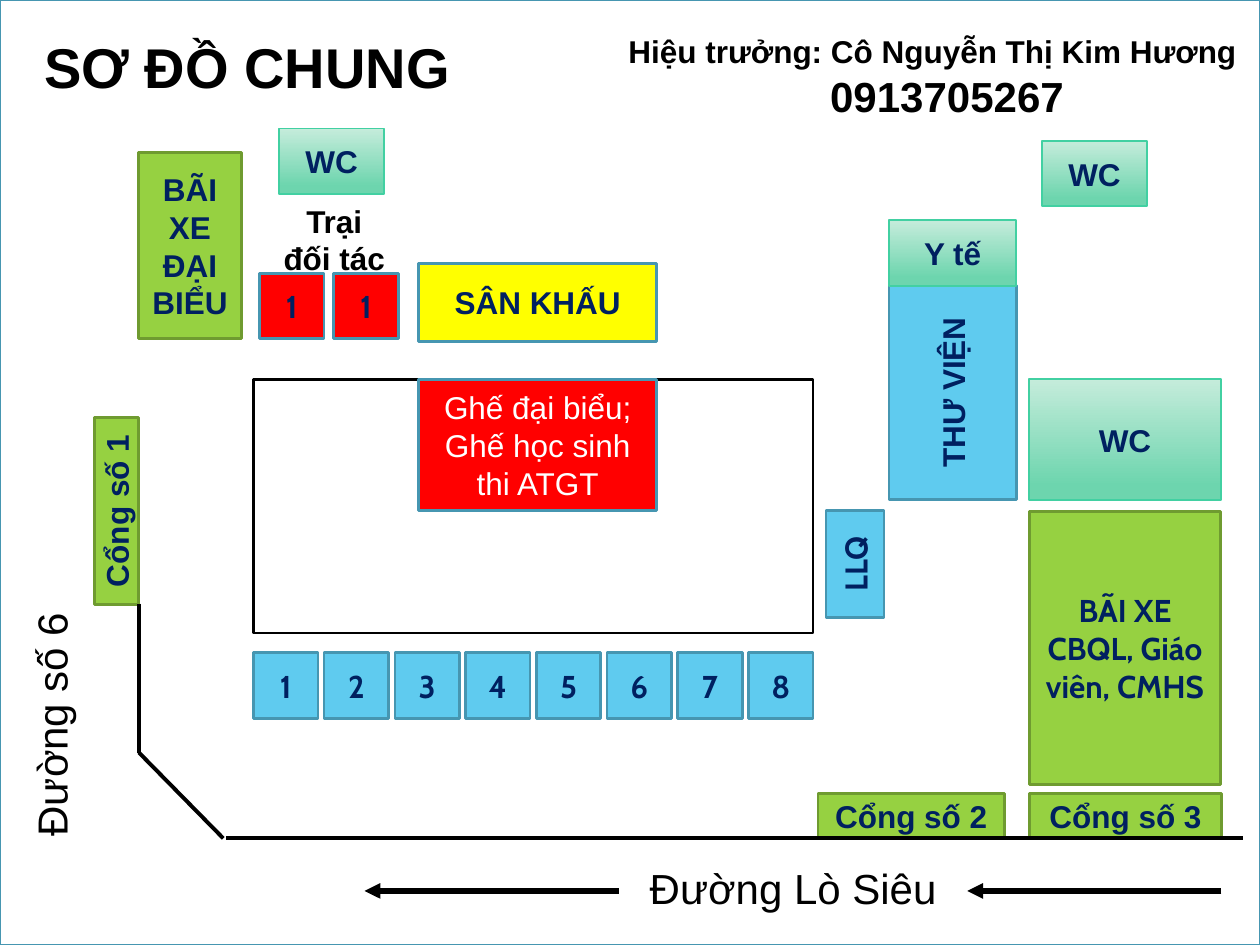
from lxml.etree import SubElement
from pptx import Presentation
from pptx.dml.color import RGBColor
from pptx.enum.shapes import MSO_CONNECTOR, MSO_SHAPE
from pptx.enum.text import MSO_ANCHOR, PP_ALIGN
from pptx.oxml.ns import qn
from pptx.util import Cm, Pt

COLORS = {
    "white": "FFFFFF", "black": "000000", "navy": "002060",
    "green": "96D141", "green_line": "6F9B30",
    "blue": "5FCBEF", "blue_line": "4696B1",
    "mint_top": "C5ECDB", "mint_bottom": "6DD5AE", "mint_line": "42D0A2",
    "yellow": "FFFF00", "red": "FF0000",
}
LINE_COLORS = {"green": "green_line", "white": "black", "mint": "mint_line"}
SMALL_ROOM = (1.3, 1.32)
SMALL_WC = (2.11, 1.32)


def color(name):
    return RGBColor.from_string(COLORS[name])


def write_text(shape, text, size=18, font="Arial", ink="navy", bold=True,
               align=PP_ALIGN.CENTER, anchor=MSO_ANCHOR.MIDDLE):
    frame = shape.text_frame
    frame.word_wrap = True
    frame.vertical_anchor = anchor
    frame.text = text
    for paragraph in frame.paragraphs:
        paragraph.alignment = align
        paragraph.font.size = Pt(size)
        paragraph.font.name = font
        paragraph.font.bold = bold
        paragraph.font.color.rgb = color(ink)
    return frame


def frame_lengths(origin, area, upright):
    left, top, width, height = area
    left, top = origin[0] + left, origin[1] + top
    if upright:
        left, top = left + (width - height) / 2, top + (height - width) / 2
        width, height = height, width
    return [Cm(length) for length in (left, top, width, height)]


def add_room(slide, origin, area, fill, text="", upright=False, line=None, **text_format):
    shape = slide.shapes.add_shape(MSO_SHAPE.RECTANGLE, *frame_lengths(origin, area, upright))
    shape.rotation = 270 if upright else 0
    shape.shadow.inherit = False
    if fill == "mint":
        shape.fill.gradient()
        shape.fill.gradient_angle = 270
        for stop, position, name in zip(shape.fill.gradient_stops, (0, 0.88),
                                        ("mint_top", "mint_bottom")):
            stop.position = position
            stop.color.rgb = color(name)
    else:
        shape.fill.solid()
        shape.fill.fore_color.rgb = color(fill)
    shape.line.color.rgb = color(line or LINE_COLORS.get(fill, "blue_line"))
    shape.line.width = Pt(1 if fill == "mint" else 1.5)
    if text:
        write_text(shape, text, **text_format)


def add_label(slide, origin, area, text, upright=False, **text_format):
    shape = slide.shapes.add_textbox(*frame_lengths(origin, area, upright))
    shape.rotation = 270 if upright else 0
    return write_text(shape, text, ink="black", anchor=MSO_ANCHOR.TOP, **text_format)


def add_line(slide, origin, start, end, width=2.25, arrow=False):
    points = [Cm(base + offset) for point in (start, end) for base, offset in zip(origin, point)]
    connector = slide.shapes.add_connector(MSO_CONNECTOR.STRAIGHT, *points)
    connector.line.color.rgb = color("black")
    connector.line.width = Pt(width)
    if arrow:
        SubElement(connector.line._get_or_add_ln(), qn("a:tailEnd"), type="triangle")
    SubElement(connector._element.spPr, qn("a:effectLst"))


def build_header(slide, box):
    add_label(slide, box, (0, 0, 8.94, 1.63), "SƠ ĐỒ CHUNG", size=32, align=PP_ALIGN.LEFT)
    frame = add_label(slide, box, (11.78, 0, 12.88, 2.06),
                      "Hiệu trưởng: Cô Nguyễn Thị Kim Hương\n0913705267", align=PP_ALIGN.LEFT)
    phone = frame.paragraphs[1]
    phone.alignment = PP_ALIGN.CENTER
    phone.font.size = Pt(24)
    phone._p.get_or_add_pPr().set("marL", str(Cm(0.46)))


def build_delegate_area(slide, box):
    add_room(slide, box, (0, 0.48, 2.08, 3.76), "green", "BÃI XE\nĐẠI BIỂU")
    add_room(slide, box, (2.84, 0, *SMALL_WC), "mint", "WC")
    for index in range(2):
        add_room(slide, box, (2.44 + 1.5 * index, 2.92, *SMALL_ROOM), "red", "1", font="Cabin")
    add_label(slide, box, (2.59, 1.35, 2.72, 1.8), "Trại\nđối tác")


def build_yard(slide, box):
    width = box[2]
    add_room(slide, box, (3.33, 0, 4.8, 1.57), "yellow", "SÂN KHẤU")
    add_room(slide, box, (0, 2.34, width, 5.11), "white")
    add_room(slide, box, (3.33, 2.34, 4.8, 2.64), "red",
             "Ghế đại biểu;\nGhế học sinh thi ATGT", ink="white", bold=False)
    step = (width - SMALL_ROOM[0]) / 7
    for index in range(8):
        add_room(slide, box, (step * index, 7.85, *SMALL_ROOM), "blue",
                 str(index + 1), font="Cabin")


def build_service_area(slide, box):
    add_room(slide, box, (0, 7.45, 1.17, 2.16), "blue", "LLQ", upright=True, font="Cabin")
    add_room(slide, box, (1.27, 2.91, 2.57, 4.32), "blue", "THƯ VIỆN", upright=True)
    add_room(slide, box, (1.27, 1.6, 2.57, 1.32), "mint", "Y tế")
    add_room(slide, box, (4.36, 0, *SMALL_WC), "mint", "WC")
    add_room(slide, box, (4.1, 4.8, 3.86, 2.44), "mint", "WC")
    add_room(slide, box, (4.1, 7.47, 3.86, 5.51), "green",
             "BÃI XE\nCBQL, Giáo viên, CMHS", font="Cabin")


def build_side_road(slide, box):
    add_label(slide, box, (0, 0, 1.27, box[3]), "Đường số 6", upright=True,
              size=24, bold=False, align=PP_ALIGN.LEFT)
    add_room(slide, box, (1.51, 5.05, 0.89, 3.76), "green", "Cổng số 1", upright=True)
    add_line(slide, box, (2.41, 8.8), (2.41, 11.8))
    add_line(slide, box, (2.41, 11.8), (4.11, 13.53))


def build_front_road(slide, box):
    add_room(slide, box, (11.94, 0, 3.76, 0.89), "green", "Cổng số 2")
    add_room(slide, box, (16.21, 0, 3.86, 0.89), "green", "Cổng số 3")
    add_line(slide, box, (box[2], 0.89), (0, 0.89))
    add_label(slide, box, (4.57, 1.27, 13.74, 1.27), "Đường Lò Siêu", size=24, bold=False)
    for start in (20.07, 7.92):
        add_line(slide, box, (start, 1.96), (start - 5.12, 1.96), width=3, arrow=True)


def main():
    presentation = Presentation()
    presentation.slide_width, presentation.slide_height = Cm(25.4), Cm(19.05)
    slide = presentation.slides.add_slide(presentation.slide_layouts[6])
    add_room(slide, (0, 0), (0, 0, 25.4, 19.05), "white", line="blue_line")
    build_header(slide, (0.64, 0.53, 24.66, 2.06))
    build_delegate_area(slide, (2.79, 2.59, 5.31, 4.24))
    build_yard(slide, (5.11, 5.31, 11.28, 9.17))
    build_service_area(slide, (16.65, 2.84, 7.96, 12.98))
    build_side_road(slide, (0.39, 3.37, 4.11, 13.74))
    build_front_road(slide, (4.55, 16, 20.5, 2.54))
    presentation.save("out.pptx")


if __name__ == "__main__":
    main()
